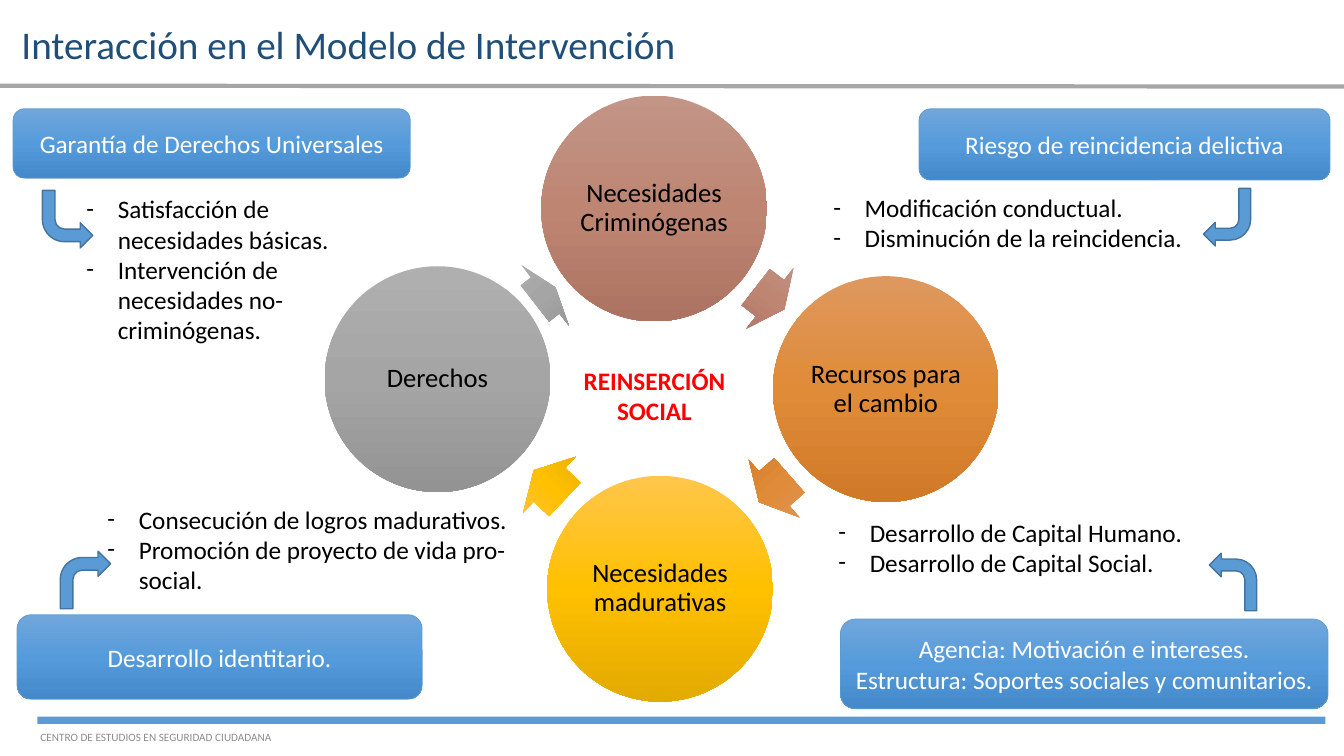
from copy import deepcopy

from lxml.etree import SubElement
from pptx import Presentation
from pptx.dml.color import RGBColor
from pptx.enum.shapes import MSO_CONNECTOR, MSO_SHAPE
from pptx.enum.text import MSO_ANCHOR, PP_ALIGN
from pptx.oxml.ns import qn
from pptx.util import Cm, Pt

COLORS = {
    "title": "1F4E79", "rule": "A6A6A6", "blue": "5B9BD5", "blue_edge": "43739E",
    "footer": "8C8C8C", "black": "000000", "white": "FFFFFF", "red": "FF0000",
}
GRADIENTS = {
    "gray": ("AFAFAF", "A5A5A5", "939393"),
    "brown": ("C29587", "BE8573", "AD7362"),
    "orange": ("DE985E", "E08B38", "D07A29"),
    "yellow": ("FFC64B", "FFC000", "E3AA00"),
    "blue": ("71A6DB", "559BDB", "448ACA"),
}


def write_text(box, text, size=18, color="black", bold=False, align=PP_ALIGN.LEFT,
               anchor=MSO_ANCHOR.TOP, side=0.25, edge=0.13, spacing=None,
               bullet=None, wrap=True):
    frame = box.text_frame
    frame.word_wrap = wrap
    frame.vertical_anchor = anchor
    frame.margin_left = frame.margin_right = Cm(side)
    frame.margin_top = frame.margin_bottom = Cm(edge)
    for index, line in enumerate(text.split("\n")):
        para = frame.add_paragraph() if index else frame.paragraphs[0]
        para.alignment = align
        if spacing:
            para.line_spacing = spacing
        if bullet:
            properties = para._p.get_or_add_pPr()
            properties.set("marL", str(Cm(0.79)))
            properties.set("indent", str(-Cm(0.79)))
            SubElement(properties, qn("a:buFont")).set("typeface", "Calibri")
            SubElement(properties, qn("a:buChar")).set("char", bullet)
        span = para.add_run()
        span.text = line
        span.font.name = "Calibri"
        span.font.size = Pt(size)
        span.font.bold = bold
        span.font.color.rgb = RGBColor.from_string(COLORS[color])


def paint_gradient(shape, name):
    shape.shadow.inherit = False
    shape.fill.gradient()
    stop_list = shape._element.spPr.find(qn("a:gradFill")).find(qn("a:gsLst"))
    stop_list.append(deepcopy(stop_list[-1]))
    for index, stop in enumerate(shape.fill.gradient_stops):
        stop.position = index / 2
        stop.color.rgb = RGBColor.from_string(GRADIENTS[name][index])
    shape.fill.gradient_angle = 270
    shape.line.fill.background()


deck = Presentation()
deck.slide_width, deck.slide_height = Cm(33.87), Cm(19.05)
page = deck.slides.add_slide(deck.slide_layouts[5])
shapes = page.shapes

title = shapes.title
title.left, title.top, title.width, title.height = Cm(0), Cm(0.2), Cm(33.87), Cm(1.8)
write_text(title, "Interacción en el Modelo de Intervención", size=28, color="title",
           anchor=MSO_ANCHOR.MIDDLE, side=0.54)

footer_bar = shapes.add_shape(MSO_SHAPE.RECTANGLE, Cm(0.94), Cm(18.06), Cm(32.46), Cm(0.18))
footer_bar.shadow.inherit = False
footer_bar.fill.solid()
footer_bar.fill.fore_color.rgb = RGBColor.from_string(COLORS["blue"])
footer_bar.line.fill.background()
footer = shapes.add_textbox(Cm(1.02), Cm(18.31), Cm(6.35), Cm(0.51))
write_text(footer, "CENTRO DE ESTUDIOS EN SEGURIDAD CIUDADANA", size=8, color="footer",
           anchor=MSO_ANCHOR.MIDDLE, side=0, edge=0, wrap=False)

title_rule = shapes.add_connector(MSO_CONNECTOR.STRAIGHT, Cm(0), Cm(2.16), Cm(33.87), Cm(2.18))
title_rule.line.color.rgb = RGBColor.from_string(COLORS["rule"])
title_rule.line.width = Pt(3)
SubElement(title_rule._element.spPr, qn("a:effectLst"))

cycle = [
    ("Derechos", "gray", 8.18, 6.71, 13.41, 6.48, 0.66, 321.9),
    ("Necesidades Criminógenas", "brown", 13.64, 2.41, 18.95, 6.55, 0.91, 37.8),
    ("Recursos para el cambio", "orange", 19.48, 6.96, 19, 11.35, 1.02, 138.6),
    ("Necesidades madurativas", "yellow", 13.79, 11.99, 13.31, 11.25, 1.07, 223.2),
]
for text, gradient, left, top, arrow_left, arrow_top, arrow_width, angle in cycle:
    circle = shapes.add_shape(MSO_SHAPE.OVAL, Cm(left), Cm(top), Cm(5.69), Cm(5.69))
    paint_gradient(circle, gradient)
    write_text(circle, text, size=19, align=PP_ALIGN.CENTER, anchor=MSO_ANCHOR.MIDDLE,
               side=0.08, edge=0.08, spacing=0.9)
    arrow = shapes.add_shape(MSO_SHAPE.RIGHT_ARROW, Cm(arrow_left), Cm(arrow_top),
                             Cm(arrow_width), Cm(1.93))
    arrow.adjustments[0] = 0.6
    arrow.adjustments[1] = 0.5
    arrow.rotation = angle
    paint_gradient(arrow, gradient)

headings = [
    ("Riesgo de reincidencia delictiva", 23.16, 2.74, 10.36, 1.8),
    ("Agencia: Motivación e intereses.\nEstructura: Soportes sociales y comunitarios.",
     21.18, 15.6, 12.29, 2.26),
    ("Desarrollo identitario.", 0.43, 15.49, 10.21, 2.13),
    ("Garantía de Derechos Universales", 0.33, 2.74, 10.01, 1.75),
]
for text, left, top, width, height in headings:
    heading = shapes.add_shape(MSO_SHAPE.ROUNDED_RECTANGLE, Cm(left), Cm(top),
                               Cm(width), Cm(height))
    paint_gradient(heading, "blue")
    heading.line.color.rgb = RGBColor.from_string(COLORS["blue"])
    heading.line.width = Pt(0.5)
    write_text(heading, text, color="white", align=PP_ALIGN.CENTER,
               anchor=MSO_ANCHOR.MIDDLE, side=0)

bent_arrows = [
    (1.07, 4.8, 1.27, ["flipV"]),
    (1.52, 13.89, 1.27, []),
    (30.33, 4.75, 1.19, ["flipH", "flipV"]),
    (30.48, 13.94, 1.19, ["flipH"]),
]
for left, top, width, flips in bent_arrows:
    bent_arrow = shapes.add_shape(MSO_SHAPE.BENT_ARROW, Cm(left), Cm(top), Cm(width), Cm(1.45))
    bent_arrow.shadow.inherit = False
    bent_arrow.fill.solid()
    bent_arrow.fill.fore_color.rgb = RGBColor.from_string(COLORS["blue"])
    bent_arrow.line.color.rgb = RGBColor.from_string(COLORS["blue_edge"])
    bent_arrow.line.width = Pt(1)
    for flip in flips:
        bent_arrow._element.spPr.find(qn("a:xfrm")).set(flip, "1")

details = [
    ("Desarrollo de Capital Humano.\nDesarrollo de Capital Social.", 20.88, 12.9, 9.45, 1.8),
    ("Modificación conductual.\nDisminución de la reincidencia.", 20.75, 4.72, 9.45, 1.8),
    ("Satisfacción de necesidades básicas.\nIntervención de necesidades no-criminógenas.",
     1.93, 4.75, 6.91, 4.11),
    ("Consecución de logros madurativos.\nPromoción de proyecto de vida pro-social.",
     2.46, 12.57, 11.28, 2.57),
]
for text, left, top, width, height in details:
    detail = shapes.add_textbox(Cm(left), Cm(top), Cm(width), Cm(height))
    write_text(detail, text, bullet="-")

goal = shapes.add_textbox(Cm(14.22), Cm(9.07), Cm(4.55), Cm(1.8))
write_text(goal, "REINSERCIÓN SOCIAL", color="red", bold=True, align=PP_ALIGN.CENTER)

deck.save("out.pptx")
